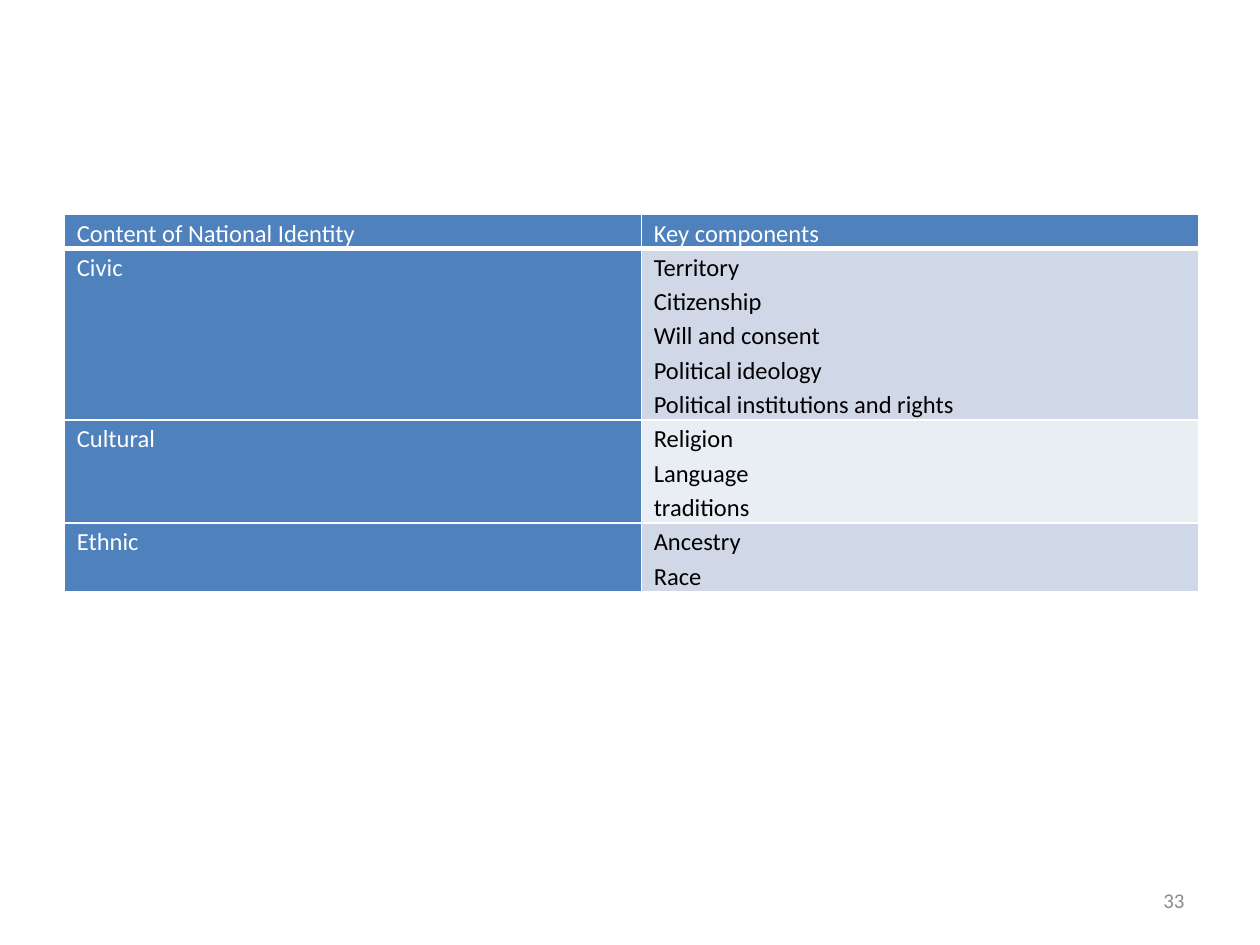
from dataclasses import dataclass

from lxml import etree
from pptx import Presentation
from pptx.dml.color import RGBColor
from pptx.enum.text import MSO_ANCHOR, PP_ALIGN
from pptx.oxml.ns import qn
from pptx.util import Cm, Pt

JUSTIFY, RIGHT = PP_ALIGN.JUSTIFY, PP_ALIGN.RIGHT
MIDDLE = MSO_ANCHOR.MIDDLE


@dataclass(frozen=True)
class Theme:
    face: str = "Calibri"
    body: int = 14
    small: int = 12
    blue: str = "4F81BD"
    bands: tuple = ("D0D8E8", "E9EDF4")
    white: str = "FFFFFF"
    black: str = "000000"
    grey: str = "8C8C8C"
    thin: int = 1
    thick: int = 3


THEME = Theme()
LINE = 0.69
HEAD = ("Content of National Identity", "Key components")
GROUPS = (
    ("Civic", ("Territory", "Citizenship", "Will and consent",
               "Political ideology", "Political institutions and rights")),
    ("Cultural", ("Religion", "Language", "traditions")),
    ("Ethnic", ("Ancestry", "Race")),
)


def style(para, size, color, align):
    para.alignment = align
    para.font.name = THEME.face
    para.font.size = Pt(size)
    para.font.color.rgb = RGBColor.from_string(color)


def border(cell, side, width):
    props = cell._tc.get_or_add_tcPr()
    line = etree.SubElement(props, qn(f"a:ln{side}"), w=str(Pt(width)))
    fill = etree.SubElement(line, qn("a:solidFill"))
    etree.SubElement(fill, qn("a:srgbClr"), val=THEME.white)


def fill_cell(cell, lines, back, color, top, bottom):
    """Write the lines and set the fill; top and bottom are border widths."""
    cell.margin_left = cell.margin_right = Cm(0.25)
    cell.margin_top = cell.margin_bottom = 0
    cell.text = "\n".join(lines)
    for para in cell.text_frame.paragraphs:
        style(para, THEME.body, color, JUSTIFY)
        para.line_spacing = 1.15
    # The schema wants borders ahead of the fill, in this order.
    widths = {"L": THEME.thin, "R": THEME.thin, "T": top, "B": bottom}
    for side, width in widths.items():
        border(cell, side, width)
    cell.fill.solid()
    cell.fill.fore_color.rgb = RGBColor.from_string(back)


def add_grid(slide):
    rows = [(HEAD[0], HEAD[1:]), *GROUPS]
    total = sum(len(parts) for _, parts in rows)
    table = slide.shapes.add_table(
        len(rows), 2, Cm(1.3), Cm(4.32), Cm(22.86), Cm(LINE * total)).table
    table.columns[0].width = Cm(11.63)
    table.columns[1].width = Cm(11.23)
    for i, (name, parts) in enumerate(rows):
        table.rows[i].height = Cm(LINE * len(parts))
        top = THEME.thick if i == 1 else THEME.thin
        bottom = THEME.thick if i == 0 else THEME.thin
        back = THEME.bands[(i - 1) % 2] if i else THEME.blue
        color = THEME.black if i else THEME.white
        fill_cell(table.cell(i, 0), [name], THEME.blue, THEME.white, top, bottom)
        fill_cell(table.cell(i, 1), parts, back, color, top, bottom)


def add_number(slide, text):
    box = slide.shapes.add_textbox(Cm(18.2), Cm(17.65), Cm(5.93), Cm(1.01))
    frame = box.text_frame
    frame.word_wrap = True
    frame.vertical_anchor = MIDDLE
    frame.text = text
    style(frame.paragraphs[0], THEME.small, THEME.grey, RIGHT)


def main():
    deck = Presentation()
    deck.slide_width, deck.slide_height = Cm(25.4), Cm(19.05)
    slide = deck.slides.add_slide(deck.slide_layouts[6])
    add_grid(slide)
    add_number(slide, "33")
    deck.save("out.pptx")


if __name__ == "__main__":
    main()
